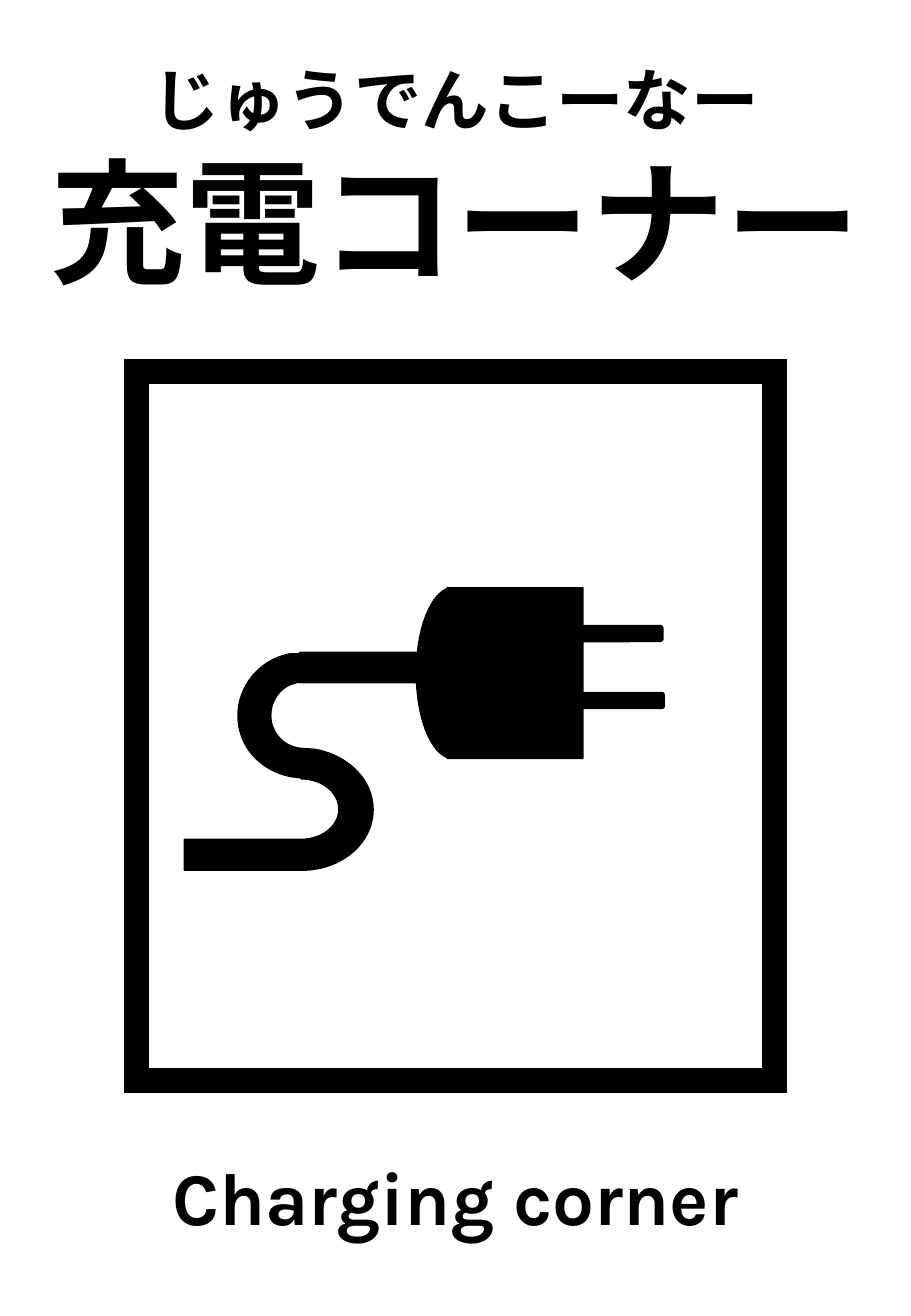
import pptx
import pptx.dml.color
import pptx.enum.lang
import pptx.enum.shapes
import pptx.enum.text
import pptx.oxml.ns
import pptx.util
from lxml import etree

Cm, Pt = pptx.util.Cm, pptx.util.Pt
qn = pptx.oxml.ns.qn
SHAPES = pptx.enum.shapes.MSO_SHAPE
LANGUAGES = pptx.enum.lang.MSO_LANGUAGE_ID
WIDTH, HEIGHT = 19.05, 27.51
BLACK = "000000"
LINE_SPACING = 1.2
JAPANESE = ("Noto Sans CJK JP", LANGUAGES.JAPANESE)
LATIN = ("Karla", LANGUAGES.ENGLISH_US)

# text, top, height (cm), size (pt), font and language
TITLE = ("充電コーナー", 2.77, 3.68, 80, JAPANESE)
CAPTIONS = [
    ("じゅうでんこーなー", 1.09, 1.96, 40, JAPANESE),
    ("Charging corner", 23.95, 2.13, 44, LATIN),
]
# left, top, width, height (cm)
FRAME = (2.86, 7.76, 13.34, 14.83)
PRONGS = [(11.32, 13.08, 2.54, 0.33), (11.35, 14.48, 2.54, 0.33)]

# Outlines in cm: two numbers are a corner, six are a Bézier curve
CORD = [
    (6.27, 13.64), (8.71, 13.64), (8.71, 14.07), (8.71, 14.27), (6.27, 14.27),
    (6.27, 14.25), (6.2, 14.27),
    (5.89, 14.33, 5.66, 14.61, 5.66, 14.96),
    (5.66, 15.34, 5.97, 15.65, 6.35, 15.65), (6.6, 15.67),
    (7.29, 15.8, 7.8, 16.31, 7.8, 16.92),
    (7.8, 17.63, 7.14, 18.19, 6.3, 18.19),
    (3.86, 18.19), (3.86, 17.55), (6.3, 17.55),
    (6.73, 17.55, 7.09, 17.27, 7.09, 16.92),
    (7.09, 16.56, 6.73, 16.28, 6.3, 16.28), (6.3, 16.26), (6.07, 16.23),
    (5.44, 16.1, 4.98, 15.6, 4.98, 14.96),
    (4.98, 14.33, 5.44, 13.79, 6.07, 13.67), (6.27, 13.67),
]
PLUG = [
    (9.35, 12.29), (9.47, 12.29), (12.19, 12.29), (12.19, 15.85), (9.47, 15.85),
    (9.35, 15.85), (9.35, 15.82), (9.32, 15.82),
    (8.97, 15.65, 8.71, 14.94, 8.71, 14.07),
    (8.71, 13.21, 8.97, 12.5, 9.32, 12.32), (9.35, 12.32),
]


def color(value):
    return pptx.dml.color.RGBColor.from_string(value)


def style_shape(shape, line_width, filled=True):
    shape.shadow.inherit = False
    if filled:
        shape.fill.solid()
        shape.fill.fore_color.rgb = color(BLACK)
    else:
        shape.fill.background()
    shape.line.color.rgb = color(BLACK)
    shape.line.width = Pt(line_width)


def write_line(box, text, top, height, size, typeface):
    """Fill a full-width box with one centred bold line."""
    box.left, box.top, box.width, box.height = Cm(0), Cm(top), Cm(WIDTH), Cm(height)
    frame = box.text_frame
    frame.word_wrap = True
    frame.auto_size = pptx.enum.text.MSO_AUTO_SIZE.SHAPE_TO_FIT_TEXT
    frame.vertical_anchor = pptx.enum.text.MSO_ANCHOR.TOP
    para = frame.paragraphs[0]
    para.alignment = pptx.enum.text.PP_ALIGN.CENTER
    para.line_spacing = Pt(size * LINE_SPACING)
    span = para.add_run()
    span.text = text
    span.font.size = Pt(size)
    span.font.bold = True
    span.font.color.rgb = color(BLACK)
    span.font.name, span.font.language_id = typeface
    east_asian = etree.SubElement(span.font._element, qn("a:ea"))
    east_asian.set("typeface", span.font.name)


def add_frame(page):
    frame = page.shapes.add_shape(SHAPES.RECTANGLE, *map(Cm, FRAME))
    style_shape(frame, 15, filled=False)
    line = frame.line._get_or_add_ln()
    etree.SubElement(line, qn("a:miter")).set("lim", "800000")


def add_outline(page, contours):
    """Draw closed contours as one freeform, then bend its curved segments."""
    ends = [[(Cm(step[-2]), Cm(step[-1])) for step in contour] for contour in contours]
    builder = page.shapes.build_freeform(*ends[0][0], scale=1.0)
    for number, points in enumerate(ends):
        if number:
            builder.move_to(*points[0])
        builder.add_line_segments(points[1:], close=True)
    shape = builder.convert_to_shape()
    steps = [step for contour in contours for step in contour[1:]]
    for segment, step in zip(list(shape._element.iter(qn("a:lnTo"))), steps):
        if len(step) == 2:
            continue
        curve = etree.Element(qn("a:cubicBezTo"))
        for x, y in (step[0:2], step[2:4]):
            control = etree.SubElement(curve, qn("a:pt"))
            control.set("x", str(Cm(x) - shape.left))
            control.set("y", str(Cm(y) - shape.top))
        curve.append(segment[0])
        segment.getparent().replace(segment, curve)
    return shape


def main():
    deck = pptx.Presentation()
    deck.slide_width, deck.slide_height = Cm(WIDTH), Cm(HEIGHT)
    page = deck.slides.add_slide(deck.slide_layouts.get_by_name("Title Only"))
    add_frame(page)
    write_line(page.shapes.title, *TITLE)
    for caption in CAPTIONS:
        write_line(page.shapes.add_textbox(0, 0, 0, 0), *caption)
    style_shape(add_outline(page, [CORD, PLUG]), 1)
    for prong in PRONGS:
        style_shape(page.shapes.add_shape(SHAPES.ROUNDED_RECTANGLE, *map(Cm, prong)), 1)
    deck.save("out.pptx")


if __name__ == "__main__":
    main()
